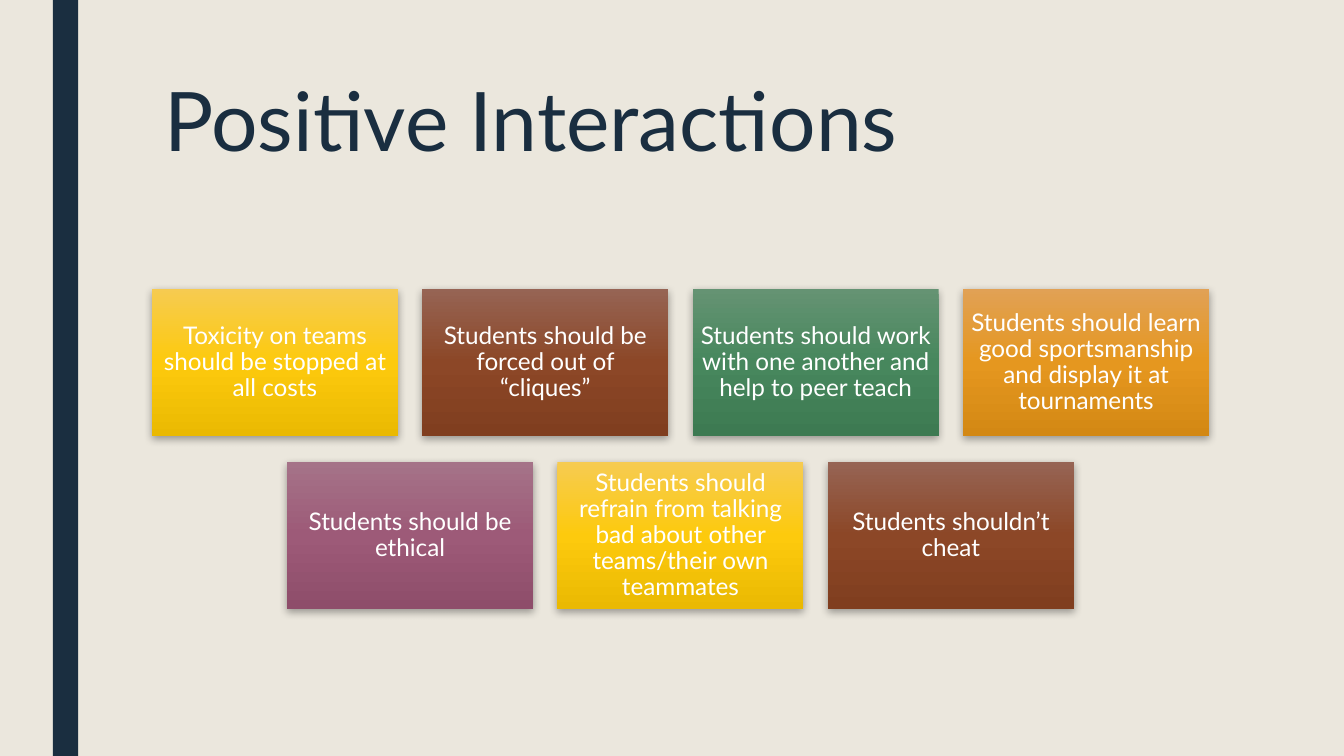
from copy import deepcopy

from lxml.etree import SubElement
from pptx import Presentation
from pptx.dml.color import RGBColor
from pptx.enum.shapes import MSO_SHAPE
from pptx.enum.text import MSO_ANCHOR, PP_ALIGN
from pptx.oxml.ns import qn
from pptx.util import Cm, Pt

FONT = "Lato"
SAND = RGBColor(0xEB, 0xE7, 0xDD)
NAVY = RGBColor(0x1A, 0x2E, 0x40)
WHITE = RGBColor(0xFF, 0xFF, 0xFF)
YELLOW = (RGBColor(0xF6, 0xCB, 0x51), RGBColor(0xFD, 0xCA, 0x0D), RGBColor(0xEA, 0xB9, 0x02))
BROWN = (RGBColor(0x96, 0x64, 0x54), RGBColor(0x8C, 0x47, 0x27), RGBColor(0x80, 0x3E, 0x1F))
GREEN = (RGBColor(0x65, 0x93, 0x73), RGBColor(0x47, 0x87, 0x5D), RGBColor(0x3D, 0x7A, 0x52))
ORANGE = (RGBColor(0xE1, 0xA1, 0x55), RGBColor(0xE5, 0x97, 0x1F), RGBColor(0xD3, 0x88, 0x14))
PLUM = (RGBColor(0xA5, 0x73, 0x88), RGBColor(0x9D, 0x5A, 0x78), RGBColor(0x8E, 0x4D, 0x6A))

CARD_WIDTH, CARD_HEIGHT = 4.65, 2.79
COLUMN_PITCH, ROW_PITCH = 5.11, 3.27
GRID_CENTER, GRID_TOP = 12.86, 5.46

CARD_ROWS = [
    [
        ("Toxicity on teams should be stopped at all costs", YELLOW),
        ("Students should be forced out of “cliques”", BROWN),
        ("Students should work with one another and help to peer teach", GREEN),
        ("Students should learn good sportsmanship and display it at tournaments", ORANGE),
    ],
    [
        ("Students should be ethical", PLUM),
        ("Students should refrain from talking bad about other teams/their own teammates", YELLOW),
        ("Students shouldn’t cheat", BROWN),
    ],
]


def format_paragraph(para, size, color, spacing, align):
    """Set the font, line spacing and alignment of a paragraph."""
    para.font.name = FONT
    para.font.size = Pt(size)
    para.font.color.rgb = color
    para.line_spacing = spacing
    para.alignment = align


def add_rectangle(page, left, top, width, height):
    """Add a rectangle without line or shadow."""
    box = page.shapes.add_shape(
        MSO_SHAPE.RECTANGLE, Cm(left), Cm(top), Cm(width), Cm(height)
    )
    box.shadow.inherit = False
    box.line.fill.background()
    return box


def fill_gradient(box, colors):
    """Fill a box from top to bottom with evenly spaced colours."""
    box.fill.gradient()
    box.fill.gradient_angle = 270
    stop_list = box._element.spPr.find(".//" + qn("a:gsLst"))
    stop_list.append(deepcopy(stop_list[0]))
    for index, (stop, color) in enumerate(zip(box.fill.gradient_stops, colors)):
        stop.position = index / (len(colors) - 1)
        stop.color.rgb = color


def add_soft_shadow(box):
    """Give a box a soft shadow just below it."""
    effects = box._element.spPr.find(qn("a:effectLst"))
    shadow = SubElement(
        effects, qn("a:outerShdw"), blurRad=str(Pt(4.5)), dist=str(Pt(1.5)),
        dir="5400000", algn="ctr", rotWithShape="0",
    )
    color = SubElement(shadow, qn("a:srgbClr"), val="000000")
    SubElement(color, qn("a:alpha"), val="35000")


def add_card(page, left, top, text, colors):
    """Add a gradient card with centred text."""
    card = add_rectangle(page, left, top, CARD_WIDTH, CARD_HEIGHT)
    fill_gradient(card, colors)
    add_soft_shadow(card)
    frame = card.text_frame
    frame.word_wrap = True
    frame.vertical_anchor = MSO_ANCHOR.MIDDLE
    frame.margin_left = frame.margin_right = Cm(0.13)
    frame.margin_top = frame.margin_bottom = Cm(0.13)
    frame.text = text
    format_paragraph(frame.paragraphs[0], 13, WHITE, 0.9, PP_ALIGN.CENTER)


def add_card_rows(page):
    """Lay out the cards in rows centred on a common axis."""
    for row, cards in enumerate(CARD_ROWS):
        row_width = (len(cards) - 1) * COLUMN_PITCH + CARD_WIDTH
        row_left = GRID_CENTER - row_width / 2
        for column, (text, colors) in enumerate(cards):
            left = row_left + column * COLUMN_PITCH
            add_card(page, left, GRID_TOP + row * ROW_PITCH, text, colors)


def set_title(page, text):
    """Place and format the title placeholder."""
    title = page.shapes.title
    title.left, title.top = Cm(2.85), Cm(1.42)
    title.width, title.height = Cm(20.02), Cm(3.1)
    frame = title.text_frame
    frame.text = text
    frame.word_wrap = True
    frame.vertical_anchor = MSO_ANCHOR.TOP
    format_paragraph(frame.paragraphs[0], 44, NAVY, 0.89, PP_ALIGN.LEFT)


def main():
    """Build the slide and save it."""
    deck = Presentation()
    deck.slide_width, deck.slide_height = Cm(25.4), Cm(14.29)
    page = deck.slides.add_slide(deck.slide_layouts[5])
    page.background.fill.solid()
    page.background.fill.fore_color.rgb = SAND
    stripe = add_rectangle(page, 1, 0, 0.48, 14.29)
    stripe.fill.solid()
    stripe.fill.fore_color.rgb = NAVY
    set_title(page, "Positive Interactions")
    add_card_rows(page)
    deck.save("out.pptx")


if __name__ == "__main__":
    main()
